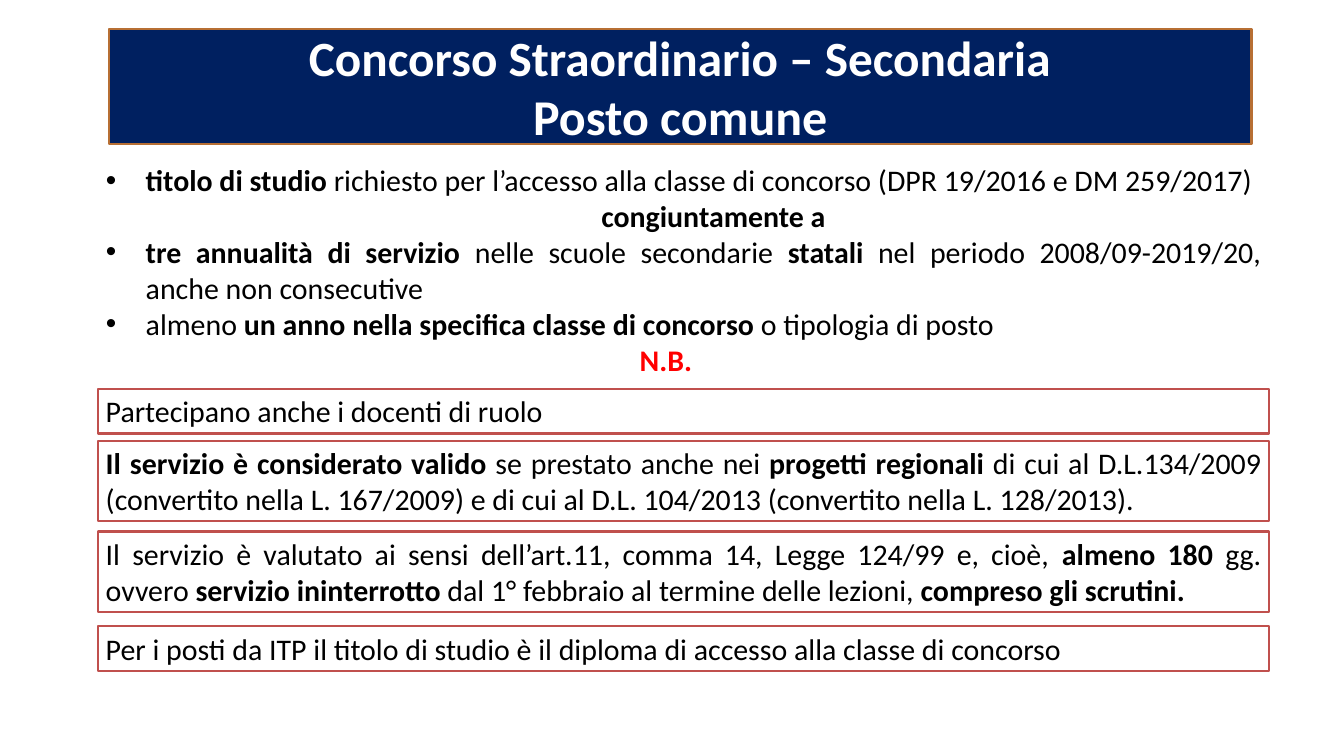
"""Build the slide on the requirements of the Concorso Straordinario."""
from dataclasses import dataclass

from lxml import etree
from pptx import Presentation, util as u
from pptx.dml.color import RGBColor
from pptx.enum import shapes, text
from pptx.oxml.ns import qn

FONT = "Calibri"
BODY_SIZE = 27
LEFT, WIDTH = 88.5, 1058.4
ONE_LINE, TWO_LINES = 40.3, 72.7
ALIGN = text.PP_ALIGN


@dataclass(frozen=True)
class Requirement:
    wording: str
    bulleted: bool = True


@dataclass(frozen=True)
class Note:
    wording: str
    top: float
    height: float


REQUIREMENTS = [
    Requirement("**titolo di studio** richiesto per l’accesso alla classe di concorso "
                "(DPR 19/2016 e DM 259/2017)"),
    Requirement("**congiuntamente a**", bulleted=False),
    Requirement("**tre annualità di servizio** nelle scuole secondarie **statali** "
                "nel periodo 2008/09-2019/20, anche non consecutive"),
    Requirement("almeno **un anno nella specifica classe di concorso** o tipologia di posto"),
]

NOTES = [
    Note("Partecipano anche i docenti di ruolo", 351.4, ONE_LINE),
    Note("**Il servizio è considerato valido** se prestato anche nei **progetti regionali** "
         "di cui al D.L.134/2009 (convertito nella L. 167/2009) e di cui al D.L. 104/2013 "
         "(convertito nella L. 128/2013).", 398.2, TWO_LINES),
    Note("Il servizio è valutato ai sensi dell’art.11, comma 14, Legge 124/99 e, cioè, "
         "**almeno 180** gg. ovvero **servizio ininterrotto** dal 1° febbraio al termine "
         "delle lezioni, **compreso gli scrutini.**", 480.2, TWO_LINES),
    Note("Per i posti da ITP il titolo di studio è il diploma di accesso alla classe "
         "di concorso", 565.9, ONE_LINE),
]


def rgb(value: str) -> RGBColor:
    return RGBColor.from_string(value)


def write(paragraph, wording: str, *, size: float = BODY_SIZE, color: str = "000000",
          align=ALIGN.JUSTIFY) -> None:
    paragraph.alignment = align
    paragraph.space_before = u.Pt(0)
    for index, part in enumerate(wording.split("**")):
        if part:
            run = paragraph.add_run()
            run.text = part
            run.font.name = FONT
            run.font.size = u.Pt(size)
            run.font.bold = index % 2 == 1
            run.font.color.rgb = rgb(color)


def indent(paragraph, margin: float, hanging: float, bullet: str = "") -> None:
    properties = paragraph._p.get_or_add_pPr()
    properties.set("marL", str(u.Pt(margin)))
    properties.set("indent", str(u.Pt(-hanging)))
    if bullet:
        etree.SubElement(properties, qn("a:buFont"), typeface="Arial")
        etree.SubElement(properties, qn("a:buChar"), char=bullet)
    else:
        etree.SubElement(properties, qn("a:buNone"))


def place(shape, left: float, top: float, width: float, height: float) -> None:
    shape.left, shape.top = u.Pt(left), u.Pt(top)
    shape.width, shape.height = u.Pt(width), u.Pt(height)


def paint(shape, fill: str, line: str) -> None:
    shape.fill.solid()
    shape.fill.fore_color.rgb = rgb(fill)
    shape.line.color.rgb = rgb(line)
    shape.line.width = u.Pt(2)


def prepare(shape, anchor=text.MSO_ANCHOR.TOP):
    frame = shape.text_frame
    frame.word_wrap = True
    frame.auto_size = text.MSO_AUTO_SIZE.NONE
    frame.vertical_anchor = anchor
    return frame


def draw_title(title) -> None:
    place(title, 98.6, 25.9, 1032.5, 104.4)
    paint(title, "002060", "B76F34")
    frame = prepare(title, text.MSO_ANCHOR.MIDDLE)
    frame.margin_left = frame.margin_right = u.Pt(10.8)
    frame.margin_top = frame.margin_bottom = u.Pt(5.8)
    write(frame.paragraphs[0], "**Concorso Straordinario – Secondaria**",
          size=44.5, color="FFFFFF", align=ALIGN.CENTER)
    write(frame.add_paragraph(), "**Posto comune**",
          size=45.2, color="FFFFFF", align=ALIGN.CENTER)


def draw_requirements(body) -> None:
    place(body, LEFT, 142.6, WIDTH, 170.6)
    frame = prepare(body)
    for index, requirement in enumerate(REQUIREMENTS):
        paragraph = frame.add_paragraph() if index else frame.paragraphs[0]
        if requirement.bulleted:
            indent(paragraph, 36, 36, "•")
            write(paragraph, requirement.wording)
        else:
            indent(paragraph, 54, 0)
            write(paragraph, requirement.wording, align=ALIGN.CENTER)


def draw_note(slide, note: Note) -> None:
    box = slide.shapes.add_shape(shapes.MSO_SHAPE.RECTANGLE, 0, 0, 0, 0)
    place(box, LEFT, note.top, WIDTH, note.height)
    box.shadow.inherit = False
    paint(box, "FFFFFF", "C0504D")
    write(prepare(box).paragraphs[0], note.wording)


def main() -> None:
    deck = Presentation()
    deck.slide_width, deck.slide_height = u.Pt(1214.6), u.Pt(680.4)
    slide = deck.slides.add_slide(deck.slide_layouts[1])
    draw_title(slide.shapes.title)
    draw_requirements(slide.placeholders[1])
    for note in NOTES:
        draw_note(slide, note)
    warning = slide.shapes.add_textbox(0, 0, 0, 0)
    place(warning, 571, 305.3, 87.8, ONE_LINE)
    write(prepare(warning).paragraphs[0], "**N.B.**", color="FF0000", align=ALIGN.LEFT)
    deck.save("out.pptx")


if __name__ == "__main__":
    main()
